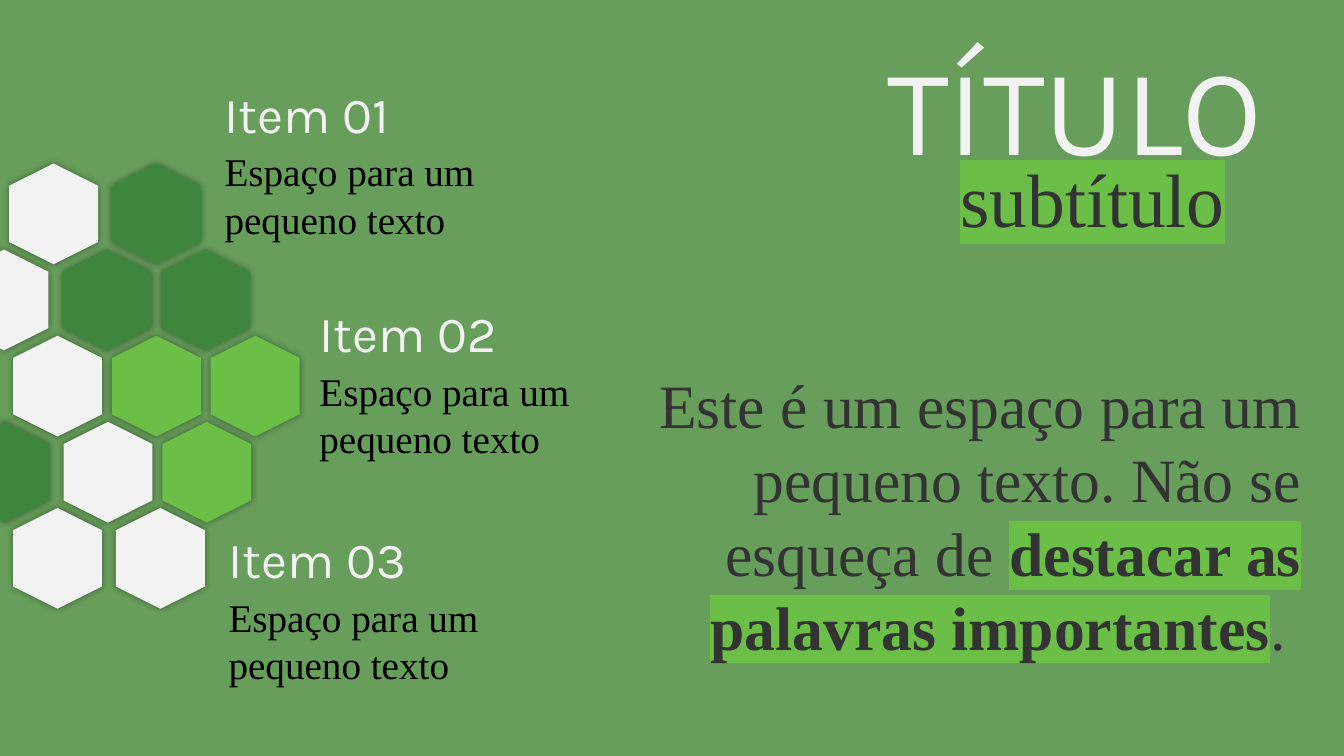
from lxml.etree import SubElement
from pptx import Presentation
from pptx.dml.color import RGBColor
from pptx.enum.shapes import MSO_SHAPE
from pptx.enum.text import MSO_ANCHOR, MSO_AUTO_SIZE, PP_ALIGN
from pptx.oxml.ns import qn
from pptx.util import Cm, Pt

WHITE, DARK, LIGHT, INK, BLACK = "F2F2F2", "3E863D", "6BBF47", "333333", "000000"
SERIF, SANS = "Times New Roman", "Karla"
HONEYCOMB_ROWS = [
    [(0.08, WHITE), (2.67, DARK)],
    [(-1.17, WHITE), (1.42, DARK), (3.91, DARK)],
    [(0.18, WHITE), (2.67, LIGHT), (5.16, LIGHT)],
    [(-1.14, DARK), (1.45, WHITE), (3.94, LIGHT)],
    [(0.18, WHITE), (2.77, WHITE)],
]
ITEMS = [("Item 01", 5.41, 1.96), ("Item 02", 7.8, 7.49), ("Item 03", 5.51, 13.18)]


def color(hex_value):
    return RGBColor.from_string(hex_value)


def set_attributes(target, values):
    for name, value in values.items():
        setattr(target, name, value)


def place(shape, left, top, width, height):
    set_attributes(shape, {"left": Cm(left), "top": Cm(top), "width": Cm(width), "height": Cm(height)})


def highlight(run, hex_value):
    properties = run.font._element
    element = SubElement(properties, qn("a:highlight"))
    SubElement(element, qn("a:srgbClr"), val=hex_value)
    properties.find(qn("a:latin")).addprevious(element)


def write_text(shape, pieces, font, size, hex_value, wrap=True, alignment=PP_ALIGN.LEFT):
    set_attributes(shape.text_frame, {
        "word_wrap": wrap,
        "auto_size": MSO_AUTO_SIZE.SHAPE_TO_FIT_TEXT,
        "vertical_anchor": MSO_ANCHOR.TOP,
    })
    paragraph = shape.text_frame.paragraphs[0]
    paragraph.alignment = alignment
    for text, bold, marker in pieces:
        run = paragraph.add_run()
        run.text = text
        set_attributes(run.font, {"name": font, "size": Pt(size), "bold": bold})
        run.font.color.rgb = color(hex_value)
        if marker:
            highlight(run, marker)


def add_text(slide, box, pieces, *style, **options):
    shape = slide.shapes.add_textbox(*map(Cm, box))
    write_text(shape, pieces, *style, **options)


def add_heading(slide, left, top):
    title = slide.shapes.title
    place(title, left, top, 10.97, 4.01)
    write_text(title, [("TÍTULO", False, None)], SANS, 88, WHITE, wrap=False)
    add_text(slide, (left + 1.85, top + 3.02, 7.24, 2.57),
             [("subtítulo", False, LIGHT)], SERIF, 54, INK, wrap=False)


def add_glow(shape):
    effects = SubElement(shape._element.spPr, qn("a:effectLst"))
    shadow = SubElement(effects, qn("a:outerShdw"), blurRad=str(Pt(5)), dist="0", dir="0",
                        algn="ctr", rotWithShape="0")
    shade = SubElement(shadow, qn("a:srgbClr"), val=BLACK)
    SubElement(shade, qn("a:alpha"), val="40000")


def add_honeycomb(slide, left, top):
    for row_index, row in enumerate(HONEYCOMB_ROWS):
        for offset, fill in row:
            hexagon = slide.shapes.add_shape(MSO_SHAPE.HEXAGON, 0, 0, 0, 0)
            place(hexagon, left + offset, top + row_index * 2.17, 2.54, 2.24)
            hexagon.rotation = 90
            hexagon.fill.solid()
            hexagon.fill.fore_color.rgb = color(fill)
            hexagon.line.fill.background()
            add_glow(hexagon)


def add_item(slide, name, left, top):
    add_text(slide, (left, top, 5.05, 1.8), [(name, False, None)], SANS, 36, WHITE, wrap=False)
    add_text(slide, (left, top + 1.64, 9.8, 2.64),
             [("Espaço para um pequeno texto", False, None)], SERIF, 28, BLACK)


def add_message(slide, left, top):
    pieces = [
        ("Este é um espaço para um pequeno texto. Não se esqueça de ", False, None),
        ("destacar as palavras importantes", True, LIGHT),
        (". ", False, None),
    ]
    add_text(slide, (left, top, 16.89, 7.77), pieces, SERIF, 44, INK, alignment=PP_ALIGN.RIGHT)


def main():
    presentation = Presentation()
    set_attributes(presentation, {"slide_width": Cm(33.87), "slide_height": Cm(19.05)})
    slide = presentation.slides.add_slide(presentation.slide_layouts[5])
    slide.background.fill.solid()
    slide.background.fill.fore_color.rgb = color("679E5B")
    add_heading(slide, 22.1, 0.69)
    add_honeycomb(slide, 0, 4.27)
    for item in ITEMS:
        add_item(slide, *item)
    add_message(slide, 16.15, 9.12)
    presentation.save("out.pptx")


if __name__ == "__main__":
    main()
